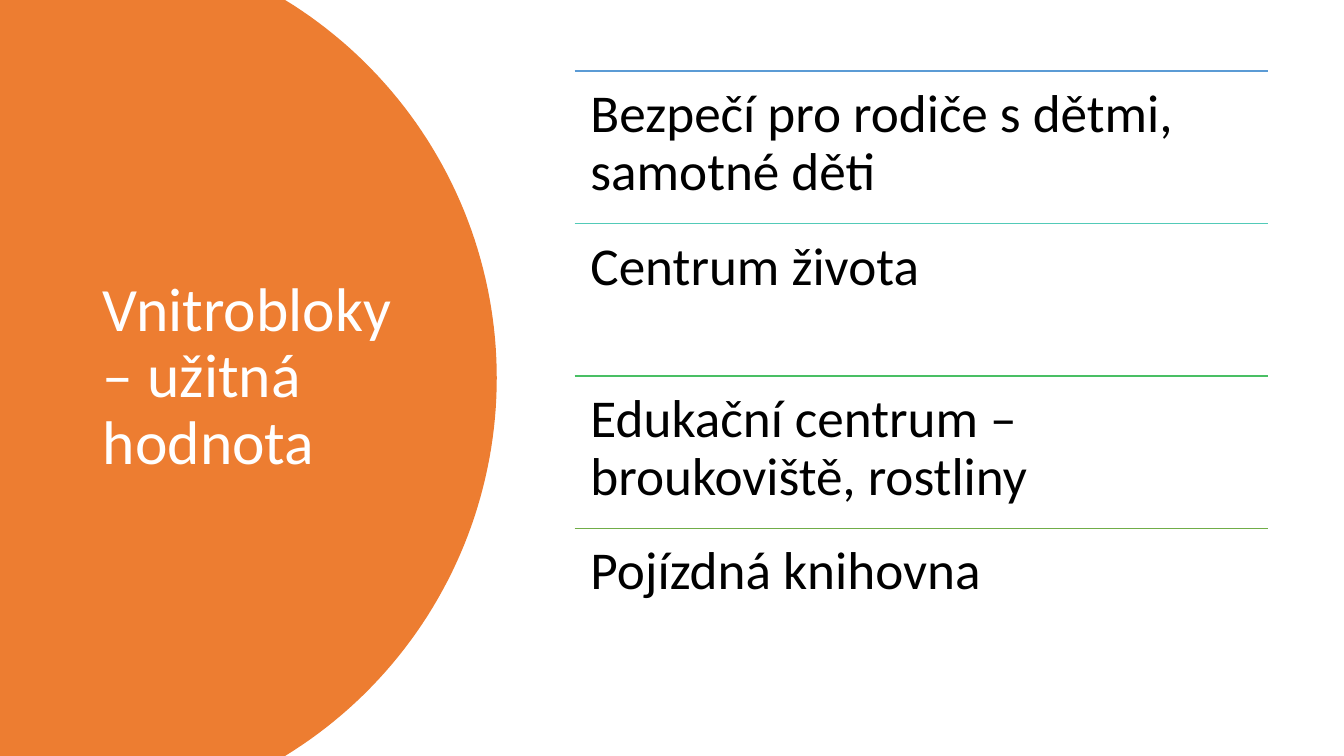
import math
from dataclasses import dataclass

import pptx
import pptx.dml.color
import pptx.enum.shapes
import pptx.enum.text
import pptx.oxml
import pptx.oxml.ns
import pptx.shapes.autoshape
import pptx.slide
import pptx.text.text
import pptx.util
from pptx.dml.color import RGBColor
from pptx.util import Cm

ORANGE = RGBColor(0xED, 0x7D, 0x31)
WHITE = RGBColor(0xFF, 0xFF, 0xFF)
BLACK = RGBColor(0x00, 0x00, 0x00)
BLUE = RGBColor(0x5B, 0x9B, 0xD5)
TEAL = RGBColor(0x52, 0xCA, 0xB8)
MINT = RGBColor(0x49, 0xBF, 0x64)
GREEN = RGBColor(0x70, 0xAD, 0x47)

FONT = "Calibri"
SLIDE_WIDTH, SLIDE_HEIGHT = Cm(33.87), Cm(19.05)
ARC_CENTRE_X, ARC_RADIUS = Cm(1.35), Cm(11.17)
ARC_STEPS = 90
LIST_LEFT, LIST_TOP, LIST_WIDTH = Cm(14.48), Cm(1.79), Cm(17.48)
ROW_HEIGHT = Cm(3.84)
ROW_INSET = Cm(0.4)


@dataclass(frozen=True)
class Benefit:
    text: str
    rule_color: RGBColor


BENEFITS = (
    Benefit("Bezpečí pro rodiče s dětmi, samotné děti", BLUE),
    Benefit("Centrum života", TEAL),
    Benefit("Edukační centrum – broukoviště, rostliny", MINT),
    Benefit("Pojízdná knihovna", GREEN),
)


def write_text(frame: pptx.text.text.TextFrame, text: str, size: float, color: RGBColor) -> None:
    frame.word_wrap = True
    frame.auto_size = pptx.enum.text.MSO_AUTO_SIZE.NONE
    paragraph = frame.paragraphs[0]
    paragraph.alignment = pptx.enum.text.PP_ALIGN.LEFT
    paragraph.line_spacing = 0.9
    run = paragraph.add_run()
    run.text = text
    run.font.name = FONT
    run.font.size = pptx.util.Pt(size)
    run.font.color.rgb = color


def add_arc_panel(slide: pptx.slide.Slide) -> None:
    """Fill the left edge up to a circular arc cut by the slide's top and bottom."""
    middle = SLIDE_HEIGHT / 2
    half_angle = math.asin(middle / ARC_RADIUS)
    angles = [half_angle * (2 * step / ARC_STEPS - 1) for step in range(ARC_STEPS + 1)]
    arc = [
        (round(ARC_CENTRE_X + ARC_RADIUS * math.cos(angle)),
         round(middle + ARC_RADIUS * math.sin(angle)))
        for angle in angles
    ]
    outline = slide.shapes.build_freeform(0, 0)
    outline.add_line_segments([*arc, (0, SLIDE_HEIGHT)], close=True)
    panel = outline.convert_to_shape()
    panel.shadow.inherit = False
    panel.fill.solid()
    panel.fill.fore_color.rgb = ORANGE
    panel.line.fill.background()


def place_title(slide: pptx.slide.Slide) -> None:
    title = slide.shapes.title
    title.left, title.top, title.width, title.height = Cm(2.34), Cm(1.79), Cm(8.2), Cm(15.47)
    title.text_frame.vertical_anchor = pptx.enum.text.MSO_ANCHOR.MIDDLE
    write_text(title.text_frame, "Vnitrobloky – užitná hodnota", 44, WHITE)
    # The title has to stand in front of the panel.
    title.element.getparent().append(title.element)


def add_benefit(slide: pptx.slide.Slide, benefit: Benefit, top: int) -> None:
    rule = slide.shapes.add_connector(
        pptx.enum.shapes.MSO_CONNECTOR.STRAIGHT, LIST_LEFT, top, LIST_LEFT + LIST_WIDTH, top
    )
    rule.line.color.rgb = benefit.rule_color
    rule.line.width = pptx.util.Pt(1)
    rule.element.spPr.append(pptx.oxml.parse_xml(
        f"<a:effectLst {pptx.oxml.ns.nsdecls('a')}/>"
    ))

    row = slide.shapes.add_textbox(LIST_LEFT, top, LIST_WIDTH, ROW_HEIGHT).text_frame
    row.margin_left = row.margin_top = row.margin_right = row.margin_bottom = ROW_INSET
    row.vertical_anchor = pptx.enum.text.MSO_ANCHOR.TOP
    write_text(row, benefit.text, 38, BLACK)


def main() -> None:
    presentation = pptx.Presentation()
    presentation.slide_width, presentation.slide_height = SLIDE_WIDTH, SLIDE_HEIGHT
    title_only = presentation.slide_layouts.get_by_name("Title Only")
    slide = presentation.slides.add_slide(title_only)
    add_arc_panel(slide)
    place_title(slide)
    for index, benefit in enumerate(BENEFITS):
        add_benefit(slide, benefit, LIST_TOP + index * ROW_HEIGHT)
    presentation.save("out.pptx")


if __name__ == "__main__":
    main()
